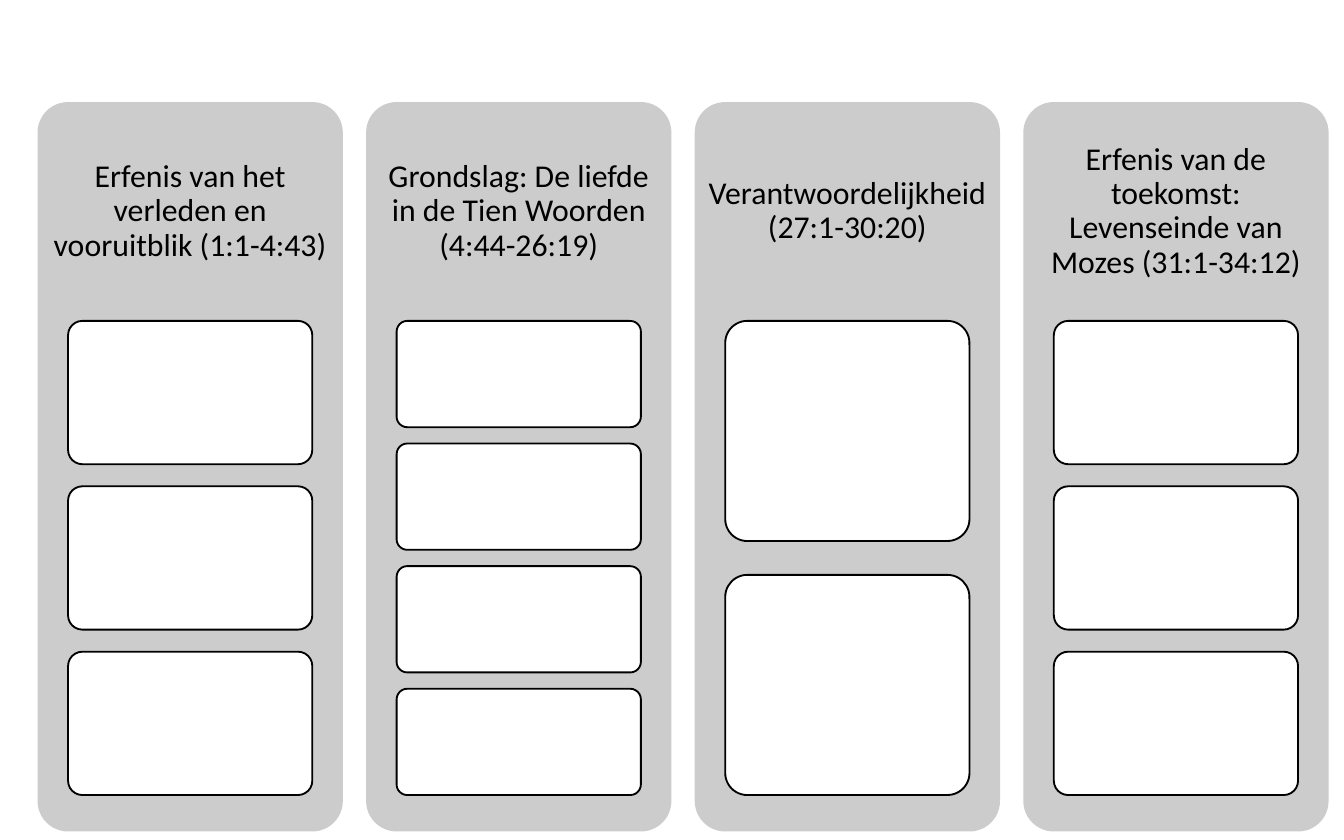
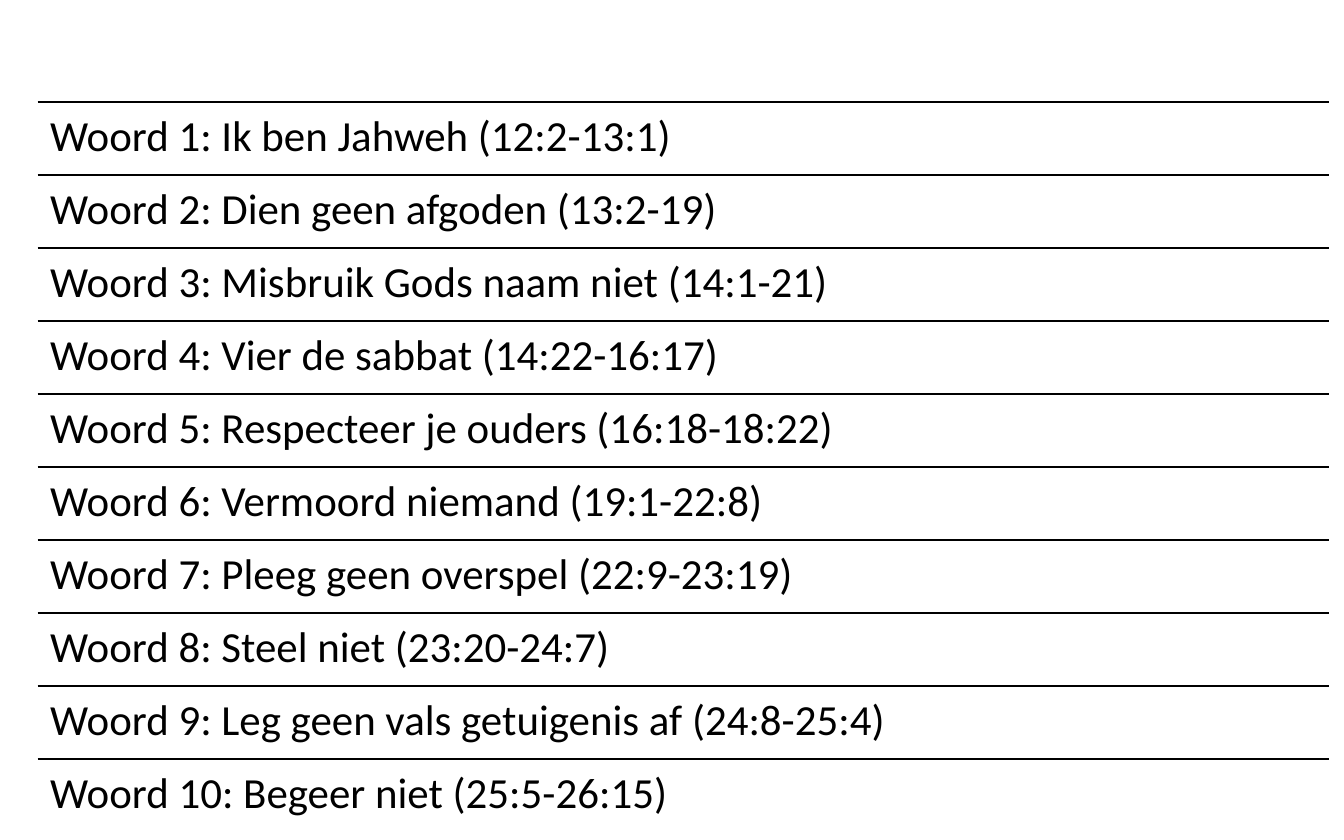
import pptx
import pptx.dml.color
import pptx.enum.shapes
import pptx.enum.text
import pptx.oxml.ns
import pptx.util
from lxml import etree
from pptx.util import Cm

COLOURS = {"text": "000000", "line": "000000", "column": "CCCCCC", "cell": "FFFFFF"}
FONT = "Calibri"
CONTENT_BOX = (0.71, 1.93, 24.4, 13.79)  # left, top, width, height in cm

COLUMNS = [
    ("Erfenis van het verleden en vooruitblik (1:1-4:43)", 3),
    ("Grondslag: De liefde in de Tien Woorden (4:44-26:19)", 4),
    ("Verantwoordelijkheid (27:1-30:20)", 2),
    ("Erfenis van de toekomst: Levenseinde van Mozes (31:1-34:12)", 3),
]
COLUMN_GAP = 0.44
HEADING_SHARE = 0.3
CELLS_SHARE = 0.65
CELL_WIDTH_SHARE = 0.8
CELL_GAP_RATIO = 2 / 13  # gap between cells relative to cell height

COMMANDMENTS = [
    "Ik ben Jahweh (12:2-13:1)",
    "Dien geen afgoden (13:2-19)",
    "Misbruik Gods naam niet (14:1-21)",
    "Vier de sabbat (14:22-16:17)",
    "Respecteer je ouders (16:18-18:22)",
    "Vermoord niemand (19:1-22:8)",
    "Pleeg geen overspel (22:9-23:19)",
    "Steel niet (23:20-24:7)",
    "Leg geen vals getuigenis af (24:8-25:4)",
    "Begeer niet (25:5-26:15)",
]


def colour(name):
    return pptx.dml.color.RGBColor.from_string(COLOURS[name])


def style_line(line):
    line.color.rgb = colour("line")
    line.width = pptx.util.Pt(1)


def add_rounded_box(slide, box, fill, outlined=False):
    shape = slide.shapes.add_shape(
        pptx.enum.shapes.MSO_SHAPE.ROUNDED_RECTANGLE, *map(Cm, box)
    )
    shape.adjustments[0] = 0.1
    shape.shadow.inherit = False
    shape.fill.solid()
    shape.fill.fore_color.rgb = colour(fill)
    if outlined:
        style_line(shape.line)
    else:
        shape.line.fill.background()


def add_text(slide, box, text, size, inset, alignment, anchor):
    frame = slide.shapes.add_textbox(*map(Cm, box)).text_frame
    frame.word_wrap = True
    frame.vertical_anchor = anchor
    frame.margin_left = frame.margin_right = Cm(inset)
    frame.margin_top = frame.margin_bottom = Cm(inset)
    paragraph = frame.paragraphs[0]
    paragraph.alignment = alignment
    paragraph.line_spacing = 0.9
    run = paragraph.add_run()
    run.text = text
    run.font.name = FONT
    run.font.size = pptx.util.Pt(size)
    run.font.color.rgb = colour("text")


def add_rule(slide, left, top, width):
    rule = slide.shapes.add_connector(
        pptx.enum.shapes.MSO_CONNECTOR.STRAIGHT,
        Cm(left), Cm(top), Cm(left + width), Cm(top),
    )
    style_line(rule.line)
    etree.SubElement(rule._element.spPr, pptx.oxml.ns.qn("a:effectLst"))


def add_column(slide, box, heading, cell_count):
    left, top, width, height = box
    add_rounded_box(slide, box, "column")
    heading_height = height * HEADING_SHARE
    add_text(
        slide, (left, top, width, heading_height), heading, 17, 0.17,
        pptx.enum.text.PP_ALIGN.CENTER, pptx.enum.text.MSO_ANCHOR.MIDDLE,
    )
    cell_width = width * CELL_WIDTH_SHARE
    cell_left = left + (width - cell_width) / 2
    cell_height = height * CELLS_SHARE / (cell_count + (cell_count - 1) * CELL_GAP_RATIO)
    for index in range(cell_count):
        cell_top = top + heading_height + index * cell_height * (1 + CELL_GAP_RATIO)
        cell_box = (cell_left, cell_top, cell_width, cell_height)
        add_rounded_box(slide, cell_box, "cell", outlined=True)


def add_columns(slide, box):
    left, top, width, height = box
    column_width = (width - (len(COLUMNS) - 1) * COLUMN_GAP) / len(COLUMNS)
    for index, (heading, cell_count) in enumerate(COLUMNS):
        column_left = left + index * (column_width + COLUMN_GAP)
        add_column(slide, (column_left, top, column_width, height), heading, cell_count)


def add_ruled_list(slide, box):
    left, top, width, height = box
    row_height = height / len(COMMANDMENTS)
    for index, commandment in enumerate(COMMANDMENTS):
        row_top = top + index * row_height
        add_rule(slide, left, row_top, width)
        add_text(
            slide, (left, row_top, width, row_height),
            f"Woord {index + 1}: {commandment}", 23, 0.24,
            pptx.enum.text.PP_ALIGN.LEFT, pptx.enum.text.MSO_ANCHOR.TOP,
        )


def main():
    presentation = pptx.Presentation()
    presentation.slide_width = Cm(25.4)
    presentation.slide_height = Cm(15.88)
    blank_layout = presentation.slide_layouts[6]
    for add_content in (add_columns, add_ruled_list):
        add_content(presentation.slides.add_slide(blank_layout), CONTENT_BOX)
    presentation.save("out.pptx")


if __name__ == "__main__":
    main()
